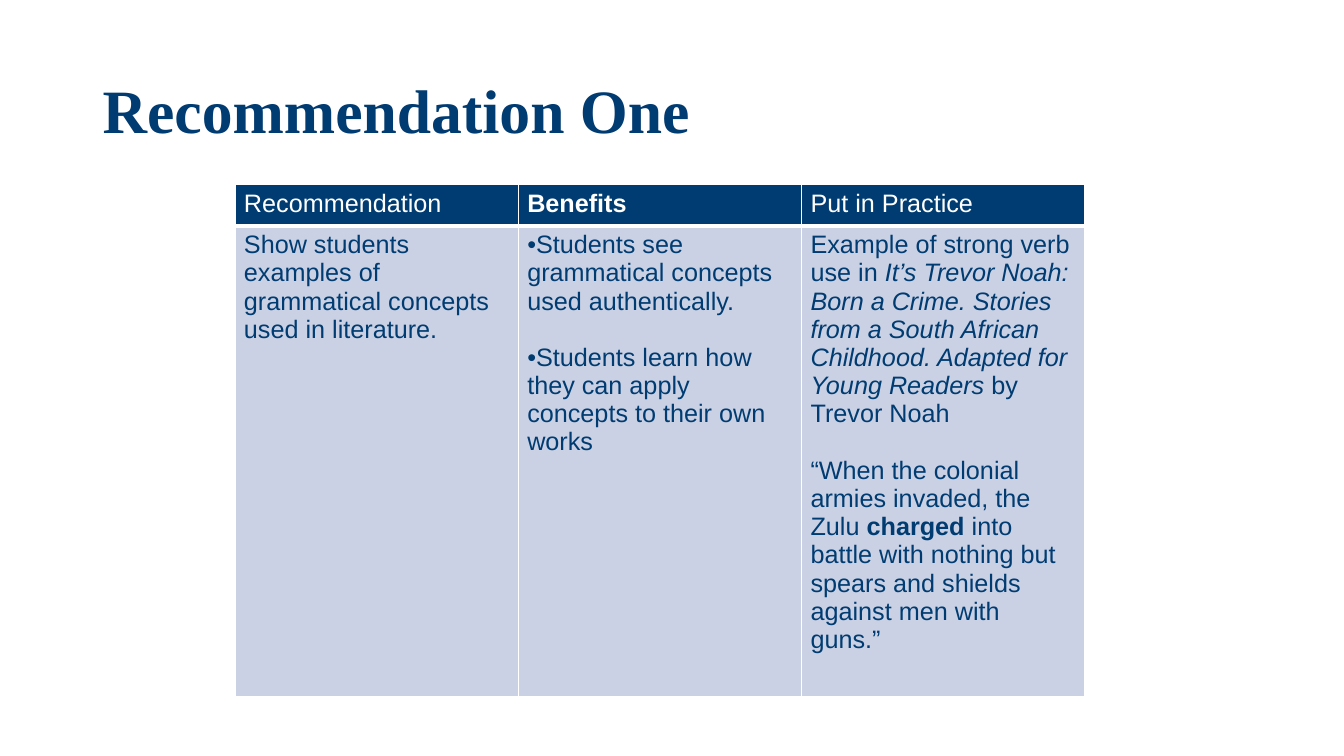
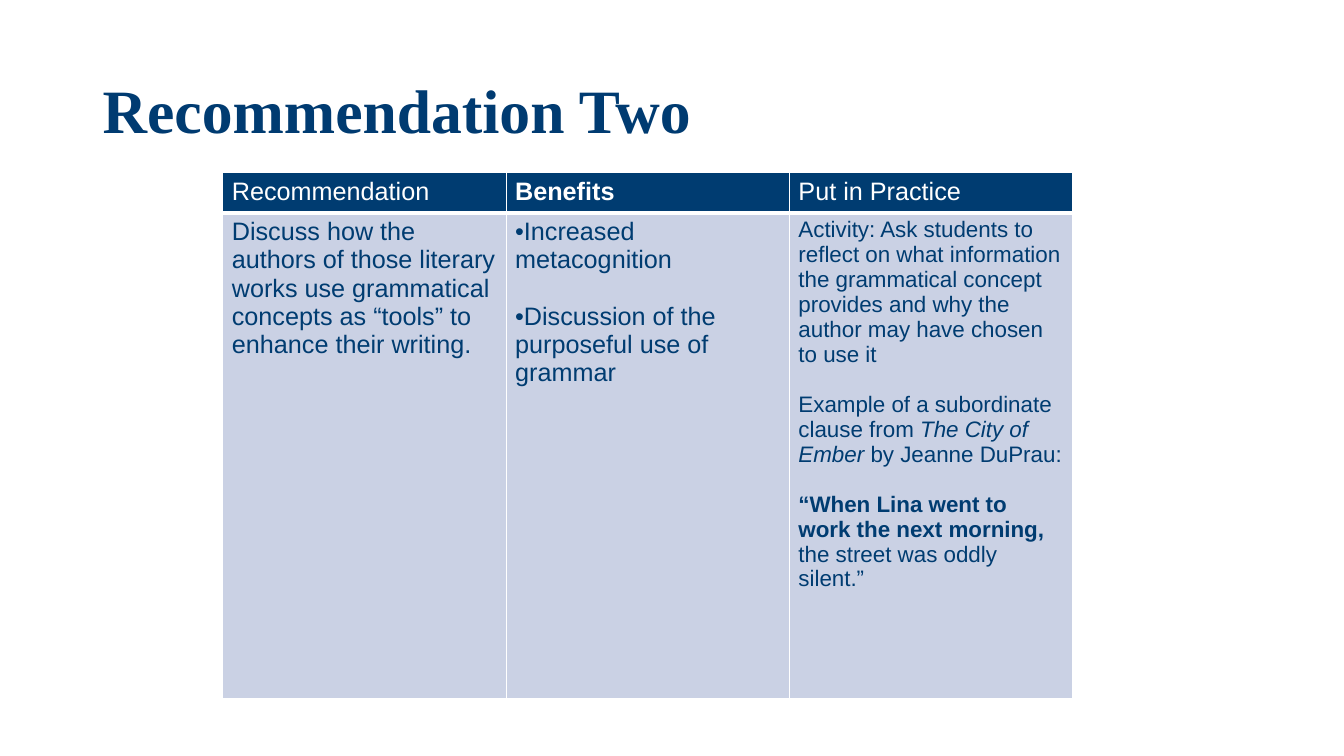
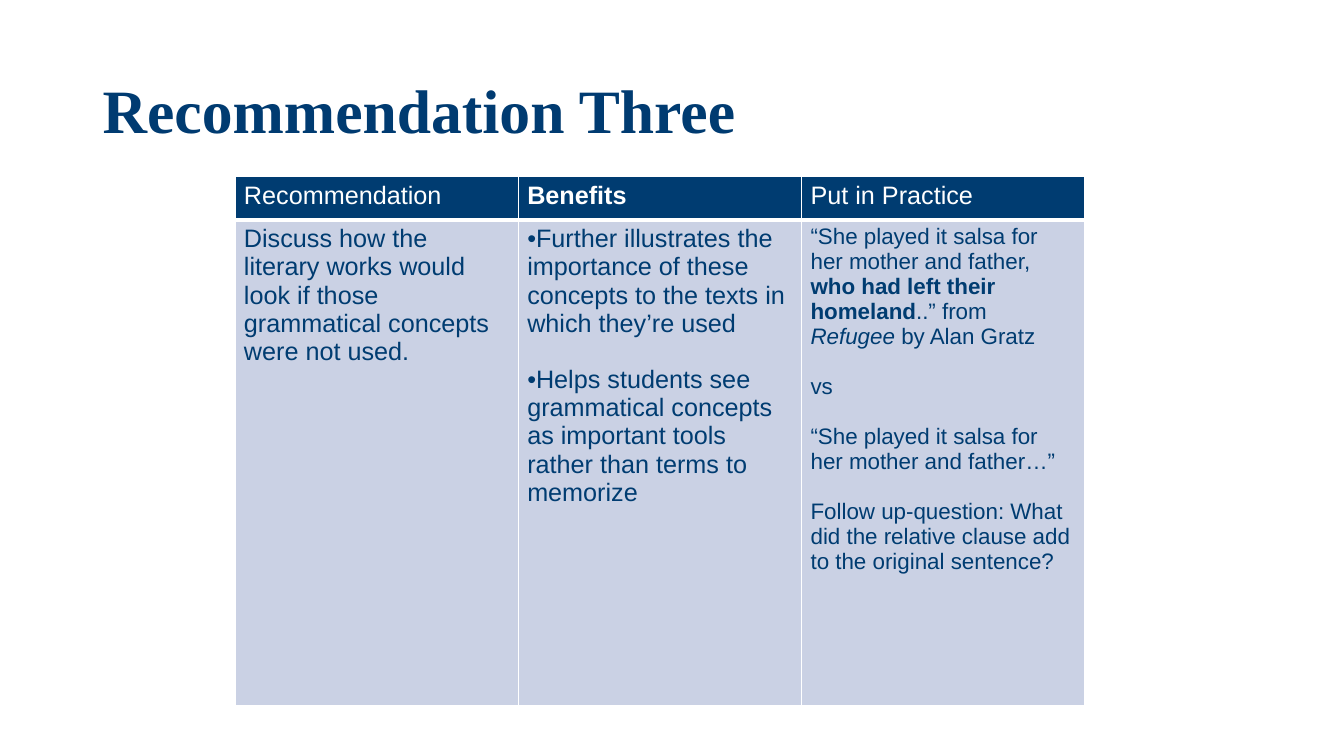
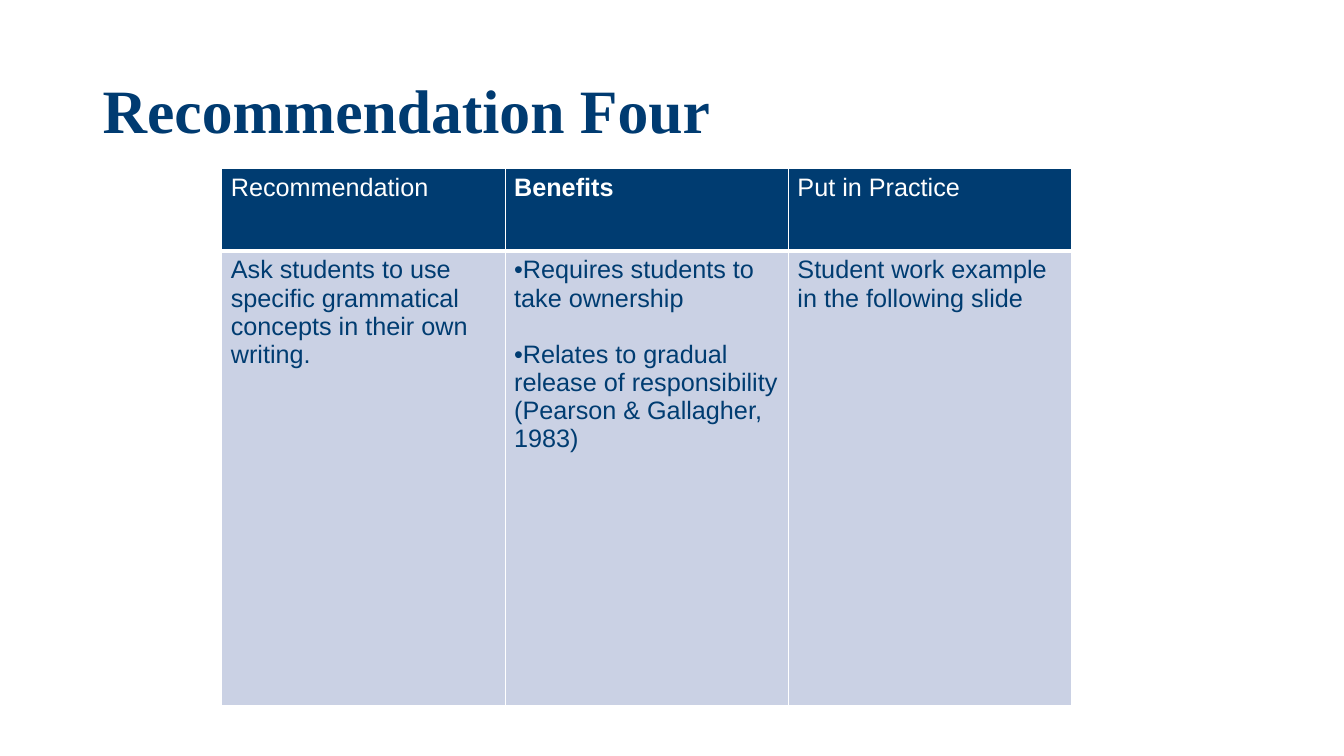
from pptx import Presentation
from pptx import util as u
from pptx.dml import color
from pptx.enum import text
from pptx.oxml import xmlchemy as xc

HEADINGS = [("Recommendation", False), ("Benefits", True), ("Put in Practice", False)]

RECOMMENDATIONS = [
    dict(
        title="Recommendation One", left=2.33, top=1.83, heights=(0.41, 4.67), practice_size=18,
        advice="Show students examples of grammatical concepts used in literature.",
        benefits=[
            "Students see grammatical concepts used authentically.",
            "Students learn how they can apply concepts to their own works",
        ],
        practice=[
            [
                "Example of strong verb use in ",
                ("It’s Trevor Noah: Born a Crime. Stories from a South African Childhood. "
                 "Adapted for Young Readers ", "i"),
                "by Trevor Noah",
            ],
            [
                "“When the colonial armies invaded, the Zulu ",
                ("charged", "b"),
                " into battle with nothing but spears and shields against men with guns.”",
            ],
        ],
    ),
    dict(
        title="Recommendation Two", left=2.21, top=1.71, heights=(0.38, 4.82), practice_size=16,
        advice="Discuss how the authors of those literary works use grammatical concepts "
               "as “tools” to enhance their writing.",
        benefits=["Increased metacognition", "Discussion of the purposeful use of grammar"],
        practice=[
            "Activity: Ask students to reflect on what information the grammatical concept "
            "provides and why the author may have chosen to use it",
            [
                "Example of a subordinate clause from ",
                ("The City of Ember ", "i"),
                "by Jeanne DuPrau:",
            ],
            [
                ("“When Lina went to work the next morning, ", "b"),
                "the street was oddly silent.”",
            ],
        ],
    ),
    dict(
        title="Recommendation Three", left=2.33, top=1.75, heights=(0.43, 4.82), practice_size=16,
        advice="Discuss how the literary works would look if those grammatical concepts "
               "were not used.",
        benefits=[
            "Further illustrates the importance of these concepts to the texts in which "
            "they’re used",
            "Helps students see grammatical concepts as important tools rather than terms "
            "to memorize",
        ],
        practice=[
            [
                "“She played it salsa for her mother and father, ",
                ("who had left their homeland", "b"),
                "..” from ",
                ("Refugee ", "i"),
                "by Alan Gratz",
            ],
            "vs",
            "“She played it salsa for her mother and father…”",
            "Follow up-question: What did the relative clause add to the original sentence?",
        ],
    ),
    dict(
        title="Recommendation Four", left=2.2, top=1.67, heights=(0.82, 4.51), practice_size=18,
        advice="Ask students to use specific grammatical concepts in their own writing.",
        benefits=[
            "Requires students to take ownership",
            "Relates to gradual release of responsibility (Pearson & Gallagher, 1983)",
        ],
        practice=["Student work example in the following slide"],
    ),
]


def rgb(value):
    return color.RGBColor.from_string(value)


def add_xml(parent, tag, **attributes):
    child = parent.makeelement(xc.qn(tag), attributes)
    parent.append(child)
    return child


def add_bullet(paragraph, ink):
    properties = paragraph._p.get_or_add_pPr()
    properties.set("marL", "0")
    properties.set("indent", "0")
    add_xml(add_xml(properties, "a:buClr"), "a:srgbClr", val=ink)
    add_xml(properties, "a:buFont", typeface="Arial")
    add_xml(properties, "a:buChar", char="•")


def write(frame, paragraphs, size=18, font="Arial", ink="003C71", bold=False,
          bullets=False, gap=0, line_spacing=None):
    for index, runs in enumerate(paragraphs):
        paragraph = frame.paragraphs[0] if index == 0 else frame.add_paragraph()
        if line_spacing:
            paragraph.line_spacing = line_spacing
        if index:
            paragraph.space_before = u.Pt(gap)
        if bullets:
            add_bullet(paragraph, ink)
        for part in [runs] if isinstance(runs, str) else runs:
            words, emphasis = (part, "") if isinstance(part, str) else part
            run = paragraph.add_run()
            run.text = words
            run.font.name = font
            run.font.size = u.Pt(size)
            run.font.bold = bold or emphasis == "b"
            run.font.italic = emphasis == "i"
            run.font.color.rgb = rgb(ink)


class Deck:
    """Holds the shared style and the current slide."""

    navy, pale, white, title_ink = "003C71", "CAD1E4", "FFFFFF", "003B71"
    column_width = 2.81
    line_height = 1.12

    def __init__(self):
        self.presentation = Presentation()
        self.presentation.slide_width = u.Inches(13.33)
        self.presentation.slide_height = u.Inches(7.5)
        self.slide = None

    def new_slide(self):
        self.slide = self.presentation.slides.add_slide(self.presentation.slide_layouts[6])

    def title(self, words):
        box = self.slide.shapes.add_textbox(
            u.Inches(0.92), u.Inches(0.4), u.Inches(11.5), u.Inches(1.45))
        frame = box.text_frame
        frame.word_wrap = True
        frame.vertical_anchor = text.MSO_ANCHOR.MIDDLE
        write(frame, [words], size=44, font="Times New Roman", ink=self.title_ink,
              bold=True, line_spacing=0.9)

    def style_cell(self, cell, fill, top, bottom):
        cell.margin_left = cell.margin_right = u.Inches(0.09)
        cell.margin_top = cell.margin_bottom = u.Inches(0.05)
        properties = cell._tc.get_or_add_tcPr()
        for side, points in (("L", 1), ("R", 1), ("T", top), ("B", bottom)):
            border = add_xml(properties, f"a:ln{side}", w=str(u.Pt(points)))
            add_xml(add_xml(border, "a:solidFill"), "a:srgbClr", val=self.white)
        cell.fill.solid()
        cell.fill.fore_color.rgb = rgb(fill)

    def table(self, left, top, heights, advice, benefits, practice, practice_size):
        grid = self.slide.shapes.add_table(
            2, 3, u.Inches(left), u.Inches(top),
            u.Inches(3 * self.column_width), u.Inches(sum(heights))).table
        for row, height in zip(grid.rows, heights):
            row.height = u.Inches(height)
        bodies = [([advice], 18, False), (benefits, 18, True), (practice, practice_size, False)]
        for index, ((heading, bold), (body, size, bullets)) in enumerate(zip(HEADINGS, bodies)):
            grid.columns[index].width = u.Inches(self.column_width)
            head_cell, body_cell = grid.cell(0, index), grid.cell(1, index)
            self.style_cell(head_cell, self.navy, top=1, bottom=3)
            self.style_cell(body_cell, self.pale, top=3, bottom=1)
            write(head_cell.text_frame, [heading], ink=self.white, bold=bold)
            write(body_cell.text_frame, body, size=size, ink=self.navy, bullets=bullets,
                  gap=round(size * self.line_height))


def main():
    deck = Deck()
    for recommendation in RECOMMENDATIONS:
        content = dict(recommendation)
        deck.new_slide()
        deck.title(content.pop("title"))
        deck.table(**content)
    deck.presentation.save("out.pptx")


if __name__ == "__main__":
    main()
